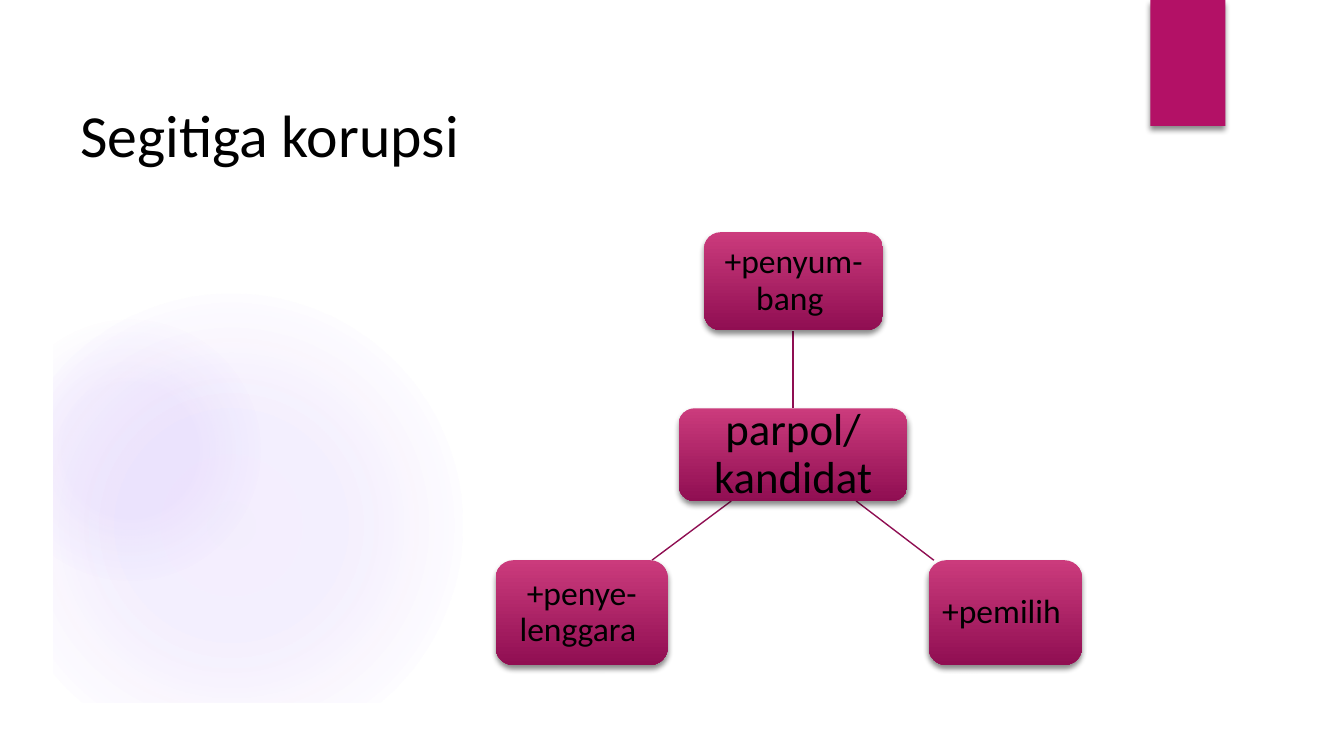
from lxml import etree
from pptx import Presentation
from pptx.dml.color import RGBColor
from pptx.enum.shapes import MSO_CONNECTOR, MSO_SHAPE
from pptx.enum.text import MSO_ANCHOR, PP_ALIGN
from pptx.oxml import parse_xml
from pptx.oxml.ns import nsdecls, qn
from pptx.util import Cm, Pt

OVAL, RECT, FRAME = MSO_SHAPE.OVAL, MSO_SHAPE.RECTANGLE, MSO_SHAPE.FRAME
ROUNDED = MSO_SHAPE.ROUNDED_RECTANGLE
STRAIGHT = MSO_CONNECTOR.STRAIGHT
CENTER, LEFT = PP_ALIGN.CENTER, PP_ALIGN.LEFT
MIDDLE, BOTTOM = MSO_ANCHOR.MIDDLE, MSO_ANCHOR.BOTTOM

COLORS = {
    "text": "000000",
    "paper": "FFFFFF",
    "glow": "9B6BF2",
    "accent": "B31166",
    "node_top": "CB3B7C",
    "node_bottom": "900E52",
    "link": "8F0E52",
}
FONT = "Calibri"


def write(shape, text, *, size, align=LEFT, anchor=MIDDLE, spacing=1.0, inset=0.25, inset_y=0.13):
    frame = shape.text_frame
    frame.word_wrap = True
    frame.vertical_anchor = anchor
    frame.margin_left = frame.margin_right = Cm(inset)
    frame.margin_top = frame.margin_bottom = Cm(inset_y)
    paragraph = frame.paragraphs[0]
    paragraph.alignment = align
    paragraph.line_spacing = spacing
    run = paragraph.add_run()
    run.text = text
    run.font.name = FONT
    run.font.size = Pt(size)
    run.font.color.rgb = RGBColor.from_string(COLORS["text"])


def add_plain(kind, box, color=None, shadow=False):
    shape = slide.shapes.add_shape(kind, *map(Cm, box))
    shape.line.fill.background()
    if color:
        shape.fill.solid()
        shape.fill.fore_color.rgb = RGBColor.from_string(COLORS[color])
    shape.shadow.inherit = False
    if shadow:
        effects = shape._element.spPr.find(qn("a:effectLst"))
        effects.append(parse_xml(
            f'<a:outerShdw {nsdecls("a")} blurRad="38100" dist="25400" dir="5400000" rotWithShape="0">'
            '<a:srgbClr val="000000"><a:alpha val="45000"/></a:srgbClr></a:outerShdw>'))
    return shape


prs = Presentation()
prs.slide_width, prs.slide_height = Cm(25.4), Cm(14.29)
slide = prs.slides.add_slide(prs.slide_layouts[5])

# Soft glows: box, then (position %, opacity %) stops
glows = [
    ((0, 5.56, 8.74, 8.74), [(0, 11), (36, 10), (75, 0), (100, 0)]),
    ((0, 6.05, 4.93, 4.93), [(0, 8), (36, 8), (72, 0), (100, 0)]),
]
for box, stops in glows:
    glow = add_plain(OVAL, box)
    stop_xml = "".join(
        f'<a:gs pos="{position * 1000}"><a:srgbClr val="{COLORS["glow"]}">'
        f'<a:alpha val="{opacity * 1000}"/></a:srgbClr></a:gs>'
        for position, opacity in stops)
    glow._element.spPr.find(qn("a:prstGeom")).addnext(parse_xml(
        f'<a:gradFill {nsdecls("a")}><a:gsLst>{stop_xml}</a:gsLst><a:path path="circle">'
        '<a:fillToRect l="50000" t="50000" r="50000" b="50000"/></a:path></a:gradFill>'))

# White border that trims the glows, and the accent tab
border = add_plain(FRAME, (0, 0, 25.4, 14.29), "paper")
border.adjustments[0] = 0.07
add_plain(RECT, (21.74, 0, 1.42, 2.38), "accent", shadow=True)

# Links from the hub to the three corners
links = [
    (14.99, 7.72, 14.99, 6.25),
    (16.18, 9.47, 17.65, 10.59),
    (13.82, 9.47, 12.32, 10.59),
]
for ends in links:
    link = slide.shapes.add_connector(STRAIGHT, *map(Cm, ends))
    link.line.color.rgb = RGBColor.from_string(COLORS["link"])
    link.line.width = Pt(0.75)
    etree.SubElement(link._element.spPr, qn("a:effectLst"))

# Hub and corners of the triangle
nodes = [
    ("parpol/ kandidat", (12.83, 7.72, 4.32, 1.75), 24, 0.18),
    ("+penyum-bang ", (13.31, 4.39, 3.38, 1.85), 18, 0.13),
    ("+pemilih ", (17.55, 10.59, 2.9, 1.98), 18, 0.13),
    ("+penye-lenggara ", (9.37, 10.59, 3.25, 1.98), 18, 0.13),
]
for label, box, size, inset in nodes:
    node = add_plain(ROUNDED, box, shadow=True)
    node.fill.gradient()
    node.fill.gradient_angle = 270
    for stop, position, color in zip(node.fill.gradient_stops, (0, 1), ("node_top", "node_bottom")):
        stop.position = position
        stop.color.rgb = RGBColor.from_string(COLORS[color])
    write(node, label, size=size, align=CENTER, spacing=0.9, inset=inset, inset_y=inset)

# Title
title = slide.shapes.title
title.left, title.top, title.width, title.height = Cm(1.27), Cm(0.71), Cm(22.86), Cm(2.62)
write(title, "Segitiga korupsi", size=32, anchor=BOTTOM)

prs.save("out.pptx")
